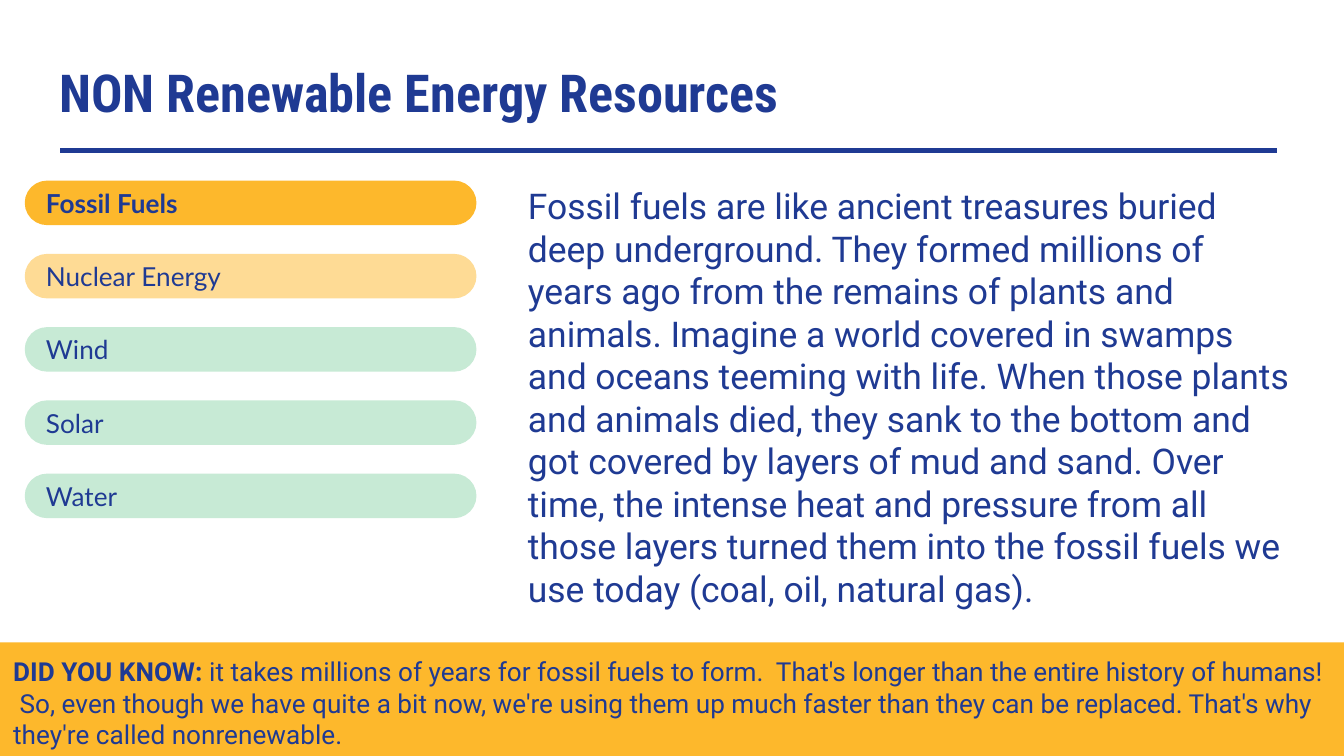
"""Build the slide on non-renewable energy resources."""
from lxml import etree
from pptx import Presentation
from pptx.dml.color import RGBColor
from pptx.enum.shapes import MSO_CONNECTOR, MSO_SHAPE
from pptx.enum.text import MSO_ANCHOR, MSO_AUTO_SIZE, PP_ALIGN
from pptx.oxml.ns import qn
from pptx.util import Inches, Pt

STRAIGHT = MSO_CONNECTOR.STRAIGHT
RECTANGLE, ROUNDED = MSO_SHAPE.RECTANGLE, MSO_SHAPE.ROUNDED_RECTANGLE
TOP, MIDDLE = MSO_ANCHOR.TOP, MSO_ANCHOR.MIDDLE
LEFT = PP_ALIGN.LEFT
NO_AUTO_SIZE, GROW = MSO_AUTO_SIZE.NONE, MSO_AUTO_SIZE.SHAPE_TO_FIT_TEXT

NAVY = RGBColor(0x1F, 0x3A, 0x93)
AMBER = RGBColor(0xFD, 0xB8, 0x2C)
PALE_AMBER = RGBColor(0xFE, 0xDB, 0x95)
MINT = RGBColor(0xC7, 0xEA, 0xD5)

FOSSIL_FUELS = (
    "Fossil fuels are like ancient treasures buried deep underground. "
    "They formed millions of years ago from the remains of plants and animals. "
    "Imagine a world covered in swamps and oceans teeming with life. "
    "When those plants and animals died, they sank to the bottom and got covered "
    "by layers of mud and sand. Over time, the intense heat and pressure from all "
    "those layers turned them into the fossil fuels we use today "
    "(coal, oil, natural gas)."
)
FACT = (
    " it takes millions of years for fossil fuels to form.  That's longer than "
    "the entire history of humans!  So, even though we have quite a bit now, "
    "we're using them up much faster than they can be replaced. "
    "That's why they're called nonrenewable."
)
RESOURCES = [
    ("Fossil Fuels", AMBER),
    ("Nuclear Energy", PALE_AMBER),
    ("Wind", MINT),
    ("Solar", MINT),
    ("Water", MINT),
]
FIRST_PILL_TOP, LAST_PILL_TOP = 1.36, 3.54


def write(shape, text, font_name, size, bold=None, anchor=TOP):
    frame = shape.text_frame
    frame.word_wrap = True
    frame.auto_size = NO_AUTO_SIZE
    frame.vertical_anchor = anchor
    frame.margin_left = frame.margin_right = Inches(0.1)
    frame.margin_top = frame.margin_bottom = Inches(0.1)
    paragraph = frame.paragraphs[0]
    paragraph.text = text
    paragraph.alignment = LEFT
    paragraph.font.name = font_name
    paragraph.font.size = Pt(size)
    paragraph.font.bold = bold
    paragraph.font.color.rgb = NAVY
    return paragraph


def add_filled(kind, left, top, width, height, color):
    shape = slide.shapes.add_shape(
        kind, Inches(left), Inches(top), Inches(width), Inches(height))
    shape.shadow.inherit = False
    shape.fill.solid()
    shape.fill.fore_color.rgb = color
    return shape


presentation = Presentation()
presentation.slide_width = Inches(10)
presentation.slide_height = Inches(10 * 9 / 16)
slide = presentation.slides.add_slide(presentation.slide_layouts[5])

title = slide.shapes.title
title.left, title.top = Inches(0.34), Inches(0.35)
title.width, title.height = Inches(9.32), Inches(0.63)
write(title, "NON Renewable Energy Resources", "Roboto Condensed", 28, bold=True)

rule = slide.shapes.add_connector(
    STRAIGHT, Inches(0.45), Inches(1.12), Inches(9.5), Inches(1.12))
rule.line.color.rgb = NAVY
rule.line.width = Pt(2.25)
etree.SubElement(rule.element.spPr, qn("a:effectLst"))

description = slide.shapes.add_textbox(
    Inches(3.83), Inches(1.27), Inches(5.91), Inches(3.4))
write(description, FOSSIL_FUELS, "Roboto", 19)
description.text_frame.auto_size = GROW

pill_step = (LAST_PILL_TOP - FIRST_PILL_TOP) / (len(RESOURCES) - 1)
for index, (resource, color) in enumerate(RESOURCES):
    pill_top = FIRST_PILL_TOP + pill_step * index
    pill = add_filled(ROUNDED, 0.2, pill_top, 3.33, 0.3, color)
    pill.adjustments[0] = 0.5
    pill.line.color.rgb = color
    pill.line.width = Pt(2.25)
    write(pill, resource, "Lato", 14, bold=index == 0, anchor=MIDDLE)

banner = add_filled(RECTANGLE, 0, 4.78, 10, 0.85, AMBER)
banner.line.fill.background()
fact = write(banner, "", "Roboto", 14)
lead = fact.add_run()
lead.text = "DID YOU KNOW:"
lead.font.bold = True
fact.add_run().text = FACT

presentation.save("out.pptx")
